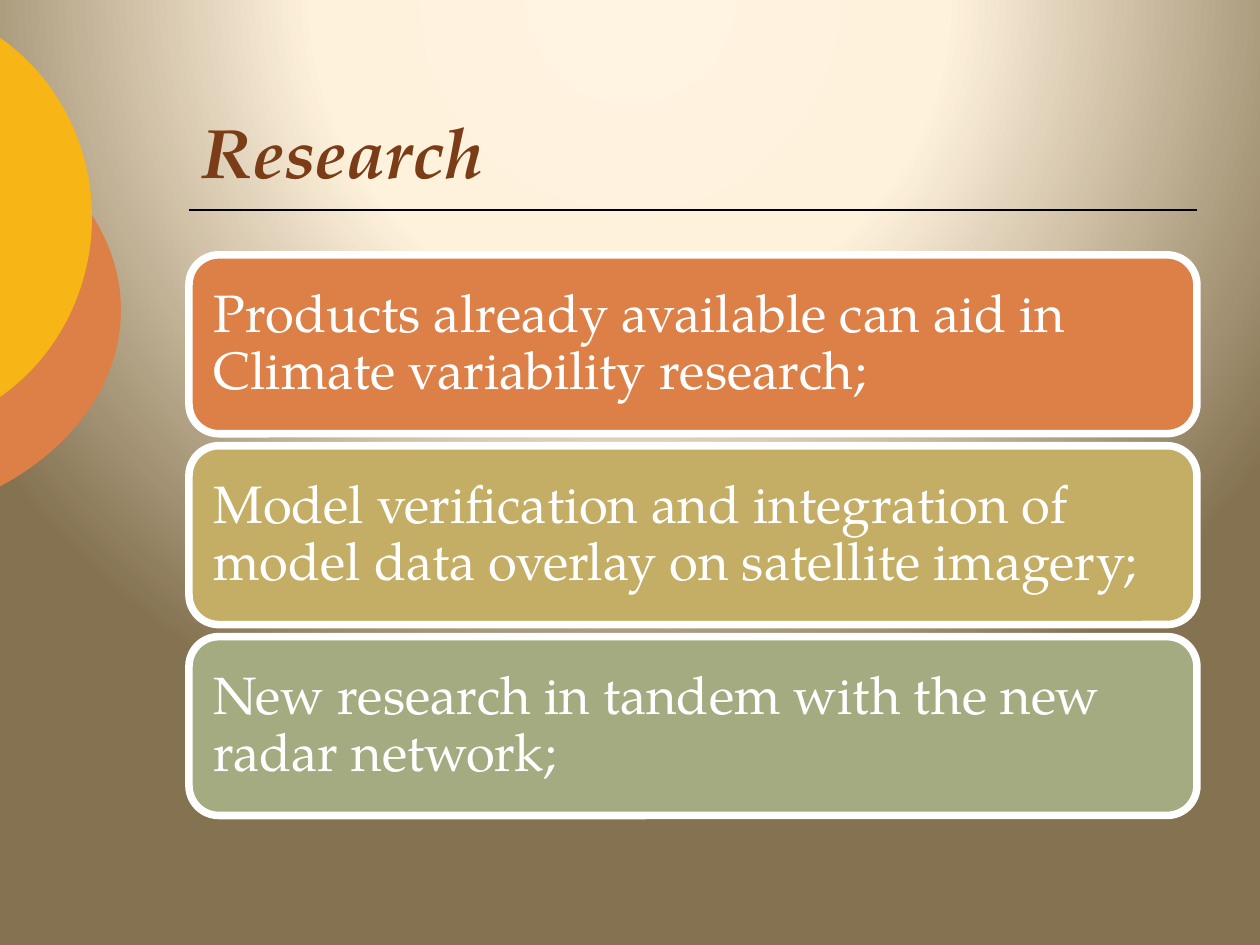
from dataclasses import dataclass
from lxml.etree import SubElement as Sub
from pptx import Presentation
from pptx.dml.color import RGBColor as Rgb
from pptx.enum.shapes import MSO_CONNECTOR as Link, MSO_SHAPE as Form
from pptx.enum.text import MSO_ANCHOR as Anchor, PP_ALIGN as Align
from pptx.oxml import parse_xml
from pptx.oxml.ns import nsdecls, qn
from pptx.util import Inches, Pt


@dataclass(frozen=True)
class Theme:
    font: str = "TeX Gyre Pagella"
    head: str = "7B3D17"
    rule: str = "000000"
    white: str = "FFFFFF"
    rust: str = "DD8047"
    gold: str = "F7B615"
    sand: str = "C4AD64"
    sage: str = "A5AB81"
    glow: tuple = ((0, "FFF4E2"), (40, "FFF2DC"), (100, "847251"))
    big: int = 40
    body: int = 30


theme = Theme()
deck = Presentation()
deck.slide_width, deck.slide_height = Inches(10), Inches(7.5)
# One column and one row are a hundredth of the slide.
col, row = deck.slide_width / 100, deck.slide_height / 100
slide = deck.slides.add_slide(deck.slide_layouts[6])
shapes = slide.shapes


def write(shape, text, size, color, anchor, pad=(0.1, 0.05), space=1, bold=False, slant=False):
    frame = shape.text_frame
    frame.word_wrap = True
    frame.vertical_anchor = anchor
    frame.margin_left = frame.margin_right = Inches(pad[0])
    frame.margin_top = frame.margin_bottom = Inches(pad[1])
    para = frame.paragraphs[0]
    para.alignment = Align.LEFT
    para.line_spacing = space
    run = para.add_run()
    run.text = text
    font = run.font
    font.name, font.size = theme.font, Pt(size)
    font.bold, font.italic = bold, slant
    font.color.rgb = Rgb.from_string(color)


def draw(path, tag, *pts):
    """Add one drawing step to a freeform path."""
    step = Sub(path, qn(f"a:{tag}"))
    for x, y in pts:
        Sub(step, qn("a:pt"), x=str(round(x * col)), y=str(round(y * row)))


# Background glow, centred above the slide
back = parse_xml(
    f'<p:bg {nsdecls("p", "a")}><p:bgPr><a:gradFill rotWithShape="1"><a:gsLst/>'
    '<a:path path="circle"><a:fillToRect l="50000" t="-80000" r="50000" b="180000"/></a:path>'
    '</a:gradFill><a:effectLst/></p:bgPr></p:bg>')
stops = back.find(".//" + qn("a:gsLst"))
for pos, color in theme.glow:
    stop = Sub(stops, qn("a:gs"), pos=str(pos * 1000))
    Sub(stop, qn("a:srgbClr"), val=color)
slide.element.cSld.insert(0, back)

# Discs cut by the left edge: frame, half height of the cut, control points
discs = (
    (theme.rust, -35.4, 10, 45, 45.6, 18.67, 6, 14.4, 7.47),
    (theme.gold, -26.5, 0, 33.8, 46, 19, 4.6, 14.73, 7.53),
)
for color, x, y, wide, tall, half, bend, high, low in discs:
    pen = shapes.build_freeform(int(x * col), int(y * row))
    pen.add_line_segments([(int((x + a * wide) * col), int((y + b * tall) * row))
                           for a, b in ((1, 0), (1, 1), (0, 1))])
    disc = pen.convert_to_shape()
    path = disc.element.find(".//" + qn("a:path"))
    for step in list(path):
        path.remove(step)
    cut, mid = -x, tall / 2
    draw(path, "moveTo", (cut, mid - half))
    draw(path, "cubicBezTo", (cut + bend, mid - high), (wide, mid - low), (wide, mid))
    draw(path, "cubicBezTo", (wide, mid + low), (cut + bend, mid + high), (cut, mid + half))
    draw(path, "close")
    disc.shadow.inherit = False
    disc.fill.solid()
    disc.fill.fore_color.rgb = Rgb.from_string(color)
    disc.line.fill.background()

# Title and rule
left, wide = int(15 * col), int(80 * col)
under = int(22.22 * row)
rule = shapes.add_connector(Link.STRAIGHT, left, under, left + wide, under)
rule.line.color.rgb = Rgb.from_string(theme.rule)
rule.line.width = Pt(1)
Sub(rule.element.spPr, qn("a:effectLst"))
title = shapes.add_textbox(left, int(4.36 * row), wide, int(16.67 * row))
write(title, "Research", theme.big, theme.head, Anchor.BOTTOM, bold=True, slant=True)

# Stacked cards
first, tall, pitch = 26.97, 18.93, 20.2
cards = (
    (theme.rust, "Products already available can aid in Climate variability research;"),
    (theme.sand, "Model verification and integration of model data overlay on satellite imagery;"),
    (theme.sage, "New research in tandem with the new radar network;"),
)
for n, (color, text) in enumerate(cards):
    card = shapes.add_shape(Form.ROUNDED_RECTANGLE, left, int((first + n * pitch) * row),
                            wide, int(tall * row))
    card.shadow.inherit = False
    card.fill.solid()
    card.fill.fore_color.rgb = Rgb.from_string(color)
    card.line.color.rgb = Rgb.from_string(theme.white)
    card.line.width = Pt(4.33)
    write(card, text, theme.body, theme.white, Anchor.MIDDLE, pad=(0.125, 0.12), space=0.9)

deck.save("out.pptx")
